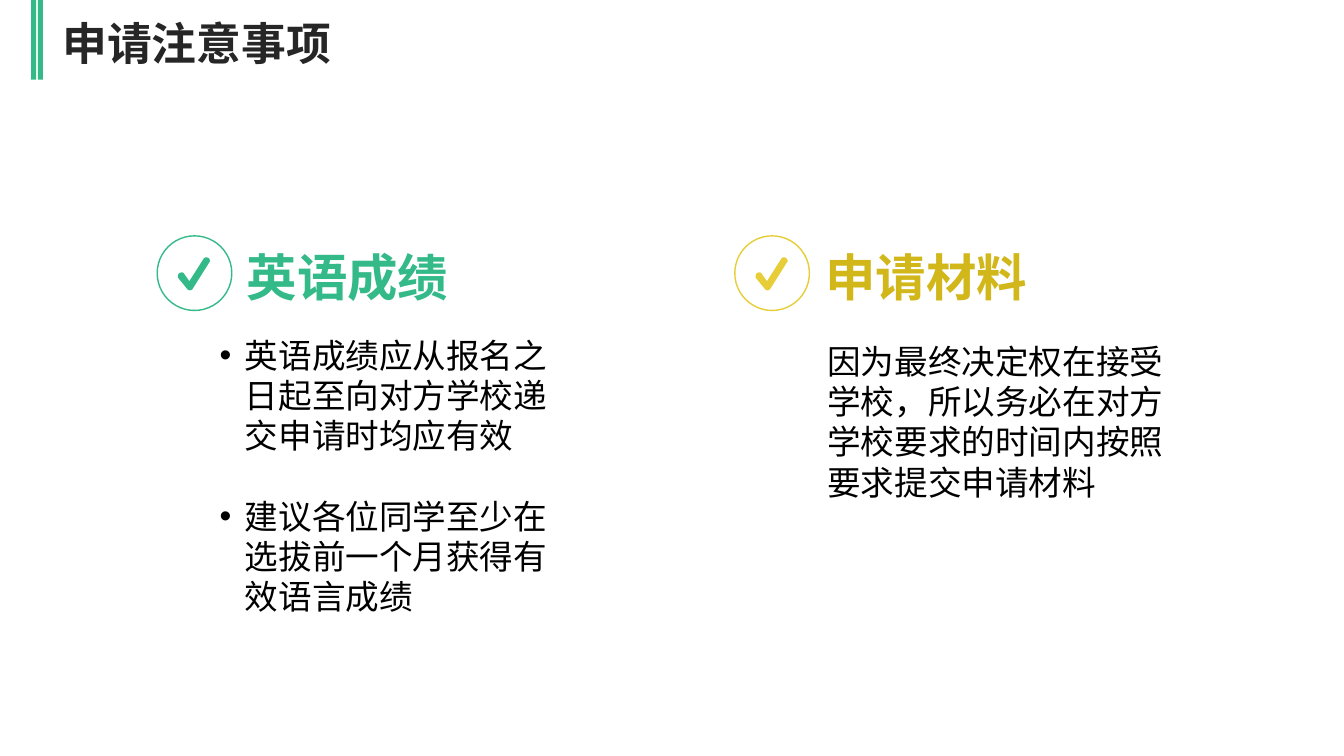
from dataclasses import dataclass
from itertools import pairwise

from lxml import etree
from pptx import Presentation
from pptx.dml.color import RGBColor
from pptx.enum.shapes import MSO_SHAPE
from pptx.oxml.ns import qn
from pptx.util import Pt

OVAL = MSO_SHAPE.OVAL
RECT = MSO_SHAPE.RECTANGLE


@dataclass(frozen=True)
class Theme:
    green: str = "34BA89"
    yellow: str = "E7CE39"
    gold: str = "D1B719"
    dark: str = "262626"
    black: str = "000000"
    narrow: str = "Arial Narrow"
    sans: str = "Noto Sans CJK SC"
    title: float = 32
    head: float = 36
    body: float = 24
    pitch: float = 28.8


@dataclass(frozen=True)
class Box:
    left: float
    top: float
    width: float
    height: float

    def emu(self) -> list:
        return [Pt(side) for side in (self.left, self.top, self.width, self.height)]


@dataclass(frozen=True)
class Style:
    font: str
    size: float
    color: str
    bold: bool = False


@dataclass(frozen=True)
class Topic:
    left: float
    accent: str
    ink: str
    head: str
    head_left: float
    body: Box
    lines: tuple
    listed: bool = False


THEME = Theme()
TOPICS = (
    Topic(112.3, THEME.green, THEME.green, "英语成绩", 169.2,
          Box(131.8, 235.4, 285.8, 211),
          ("英语成绩应从报名之日起至向对方学校递交申请时均应有效",
           "建议各位同学至少在选拔前一个月获得有效语言成绩"), True),
    Topic(524.9, THEME.yellow, THEME.gold, "申请材料", 582.5,
          Box(583.9, 239.8, 277.2, 123.8),
          ("因为最终决定权在接受学校，所以务必在对方学校要求的时间内按照要求提交申请材料",)),
)
TICK = (
    ((9.4, 23.8), (7.9, 23.8), (7.9, 23.8), (7.2, 23)),
    ((0.7, 15.1), (0, 13.7), (0.7, 12.2), (1.4, 11.5)),
    ((1.4, 11.5), (2.9, 10.8), (4.3, 10.8), (5, 12.2)),
    ((8.6, 17.3),),
    ((18.7, 1.4), (19.4, 0), (20.9, 0), (22.3, 0.7)),
    ((22.3, 0.7), (23, 1.4), (23.8, 2.9), (23, 3.6)),
    ((10.8, 23), (10.8, 23), (10.1, 23.8), (9.4, 23.8)),
)
STEPS = 6


def color(code: str) -> RGBColor:
    return RGBColor.from_string(code)


def trace(curve: tuple) -> list:
    if len(curve) == 1:
        return list(curve)
    spots = []
    for step in range(STEPS + 1):
        t = step / STEPS
        parts = ((1 - t) ** 3, 3 * t * (1 - t) ** 2, 3 * t * t * (1 - t), t ** 3)
        spots.append(tuple(sum(w * p[axis] for w, p in zip(parts, curve))
                           for axis in (0, 1)))
    return spots


def paint(shape, code: str) -> None:
    shape.shadow.inherit = False
    shape.fill.solid()
    shape.fill.fore_color.rgb = color(code)
    shape.line.fill.background()


def write(shapes, box: Box, lines: tuple, style: Style):
    frame = shapes.add_textbox(*box.emu()).text_frame
    frame.word_wrap = True
    frame.text = "\n".join(lines)
    for para in frame.paragraphs:
        for run in para.runs:
            font = run.font
            font.name, font.size, font.bold = style.font, Pt(style.size), style.bold
            font.color.rgb = color(style.color)
            east = etree.SubElement(font._element, qn("a:ea"))
            east.set("typeface", THEME.sans)
    return frame


def bullet(para) -> None:
    props = para._p.get_or_add_pPr()
    props.set("marL", str(Pt(36)))
    props.set("indent", str(-Pt(18)))
    etree.SubElement(props, qn("a:buFont")).set("typeface", "Arial")
    etree.SubElement(props, qn("a:buChar")).set("char", "•")


def draw_tick(shapes, left: float, top: float, code: str) -> None:
    spots = [(Pt(left + x), Pt(top + y)) for curve in TICK for x, y in trace(curve)]
    route = [end for start, end in pairwise(spots) if start != end]
    pen = shapes.build_freeform(*spots[0], scale=1.0)
    pen.add_line_segments(route, close=True)
    paint(pen.convert_to_shape(), code)


def draw_topic(shapes, topic: Topic) -> None:
    ring = shapes.add_shape(OVAL, *Box(topic.left, 168.5, 53.3, 53.3).emu())
    ring.shadow.inherit = False
    ring.fill.background()
    ring.line.color.rgb = color(topic.accent)
    ring.line.width = Pt(1)
    draw_tick(shapes, topic.left + 14.4, 183.6, topic.accent)
    write(shapes, Box(topic.head_left, 172.1, 329.8, 51.1), (topic.head,),
          Style(THEME.sans, THEME.head, topic.ink, True))
    frame = write(shapes, topic.body, topic.lines,
                  Style(THEME.sans, THEME.body, THEME.black))
    for para in frame.paragraphs:
        para.line_spacing = Pt(THEME.pitch)
        if topic.listed:
            bullet(para)
    for para in frame.paragraphs[1:]:
        para.space_before = Pt(THEME.pitch)


def main() -> None:
    deck = Presentation()
    deck.slide_width, deck.slide_height = Pt(960), Pt(540)
    shapes = deck.slides.add_slide(deck.slide_layouts[6]).shapes
    for topic in TOPICS:
        draw_topic(shapes, topic)
    for left in (22.3, 27):
        paint(shapes.add_shape(RECT, *Box(left, 0, 3.6, 56.9).emu()), THEME.green)
    write(shapes, Box(37.4, 7.9, 304.6, 46.1), ("申请注意事项",),
          Style(THEME.narrow, THEME.title, THEME.dark, True))
    deck.save("out.pptx")


if __name__ == "__main__":
    main()
